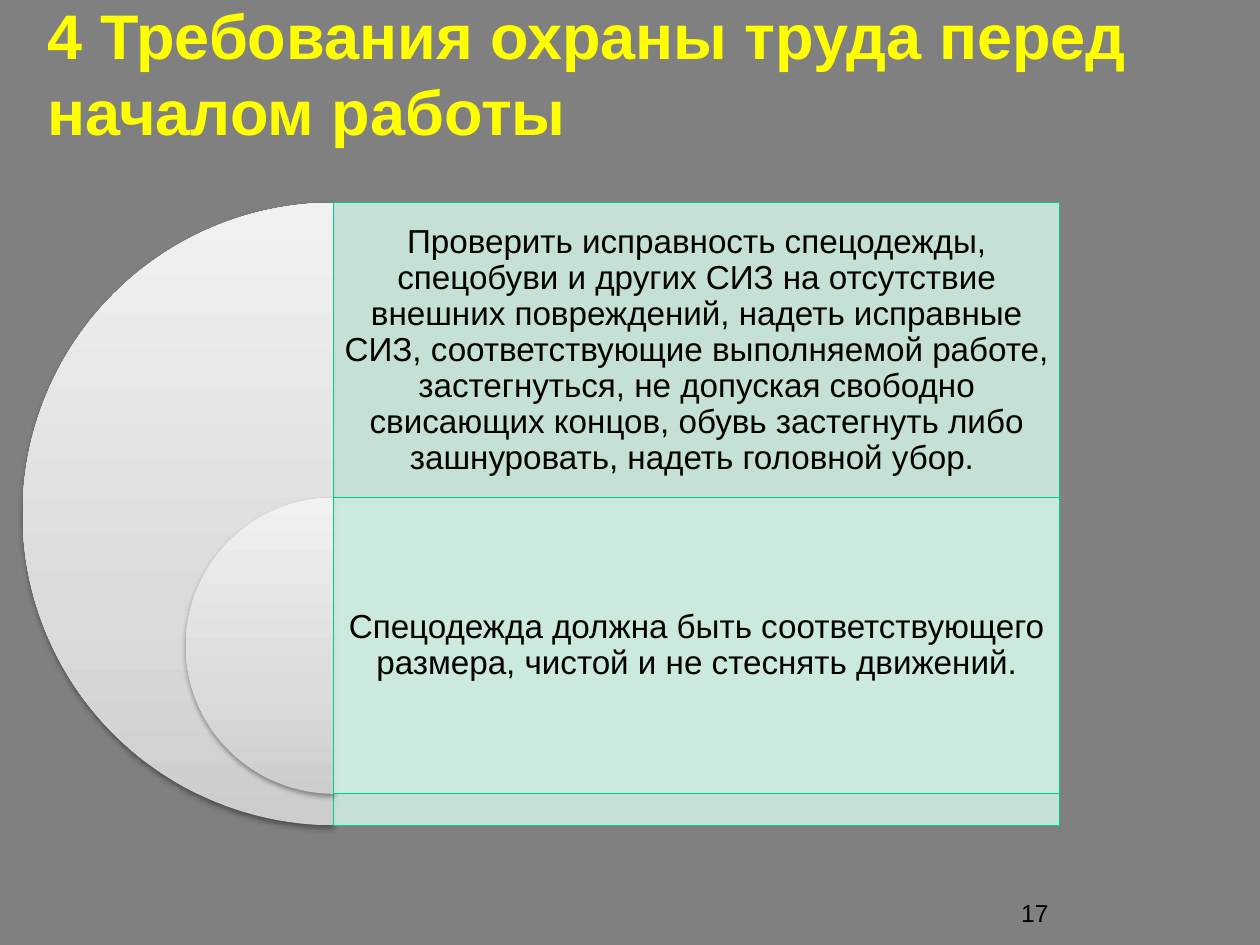
from dataclasses import dataclass

from lxml import etree
from pptx import Presentation
from pptx.dml.color import RGBColor
from pptx.enum.shapes import MSO_SHAPE
from pptx.enum.text import MSO_ANCHOR, MSO_AUTO_SIZE, PP_ALIGN
from pptx.oxml import parse_xml
from pptx.oxml.ns import qn
from pptx.util import Inches, Pt

PIE, RECT = MSO_SHAPE.PIE, MSO_SHAPE.RECTANGLE
TOP, MIDDLE = MSO_ANCHOR.TOP, MSO_ANCHOR.MIDDLE
LEFT, CENTER, RIGHT = PP_ALIGN.LEFT, PP_ALIGN.CENTER, PP_ALIGN.RIGHT
NO_AUTOFIT = MSO_AUTO_SIZE.NONE
A_NS = 'xmlns:a="http://schemas.openxmlformats.org/drawingml/2006/main"'


@dataclass(frozen=True)
class Theme:
    font: str = "Arial"
    background: str = "808080"
    title: str = "FFFF00"
    text: str = "000000"
    panel: str = "CCECDE"
    panel_line: str = "00CC99"
    panel_opacity: int = 90
    pie_stops: tuple = ((0, "CDCDCD"), (35, "DBDBDB"), (100, "F1F1F1"))
    title_size: int = 36
    body_size: int = 19
    number_size: int = 14


class SlideBuilder:
    def __init__(self, slide, theme):
        self.slide = slide
        self.theme = theme
        fill = slide.background.fill
        fill.solid()
        fill.fore_color.rgb = RGBColor.from_string(theme.background)

    def set_text(self, sp, text, size, color, align, anchor, inset=(0.1, 0.05), bold=False, spacing=1.0):
        tf = sp.text_frame
        tf.text = text
        tf.word_wrap = True
        tf.auto_size = NO_AUTOFIT
        tf.vertical_anchor = anchor
        tf.margin_left = tf.margin_right = Inches(inset[0])
        tf.margin_top = tf.margin_bottom = Inches(inset[1])
        p = tf.paragraphs[0]
        p.alignment = align
        p.line_spacing = spacing
        font = p.runs[0].font
        font.name = self.theme.font
        font.size = Pt(size)
        font.bold = bold
        font.color.rgb = RGBColor.from_string(color)

    def title(self, text, x, y, w, h):
        sp = self.slide.shapes.title
        sp.left, sp.top, sp.width, sp.height = map(Inches, (x, y, w, h))
        self.set_text(sp, text, self.theme.title_size, self.theme.title, LEFT, MIDDLE, bold=True)

    def textbox(self, text, x, y, w, h, size, align, anchor, **style):
        sp = self.slide.shapes.add_textbox(*map(Inches, (x, y, w, h)))
        self.set_text(sp, text, size, self.theme.text, align, anchor, **style)

    def half_disc(self, x, y, diameter):
        sp = self.slide.shapes.add_shape(PIE, *map(Inches, (x, y, diameter, diameter)))
        sp.adjustments[0] = 54
        sp.adjustments[1] = 162
        sp.line.fill.background()
        sp.fill.background()
        sp.shadow.inherit = False
        stops = "".join(
            f'<a:gs pos="{pos * 1000}"><a:srgbClr val="{color}"/></a:gs>'
            for pos, color in self.theme.pie_stops
        )
        gradient = parse_xml(
            f'<a:gradFill {A_NS} rotWithShape="1"><a:gsLst>{stops}</a:gsLst>'
            '<a:lin ang="16200000" scaled="0"/></a:gradFill>'
        )
        sp_pr = sp._element.spPr
        sp_pr.replace(sp_pr.find(qn("a:noFill")), gradient)
        sp_pr.find(qn("a:effectLst")).append(parse_xml(
            f'<a:outerShdw {A_NS} blurRad="{Pt(3.1)}" dist="{Pt(1.6)}" dir="5400000" rotWithShape="0">'
            '<a:srgbClr val="000000"><a:alpha val="38000"/></a:srgbClr></a:outerShdw>'
        ))

    def panel(self, x, y, w, h):
        sp = self.slide.shapes.add_shape(RECT, *map(Inches, (x, y, w, h)))
        sp.shadow.inherit = False
        sp.fill.solid()
        sp.fill.fore_color.rgb = RGBColor.from_string(self.theme.panel)
        color = sp._element.spPr.find(qn("a:solidFill"))[0]
        etree.SubElement(color, qn("a:alpha")).set("val", str(self.theme.panel_opacity * 1000))
        sp.line.color.rgb = RGBColor.from_string(self.theme.panel_line)
        sp.line.width = Pt(0.75)


def main():
    theme = Theme()
    prs = Presentation()
    prs.slide_width, prs.slide_height = Inches(10), Inches(7.5)
    builder = SlideBuilder(prs.slides.add_slide(prs.slide_layouts[5]), theme)
    builder.title("4 Требования охраны труда перед началом работы", 0.28, 0.3, 9.29, 0.55)

    axis, panel_width, row_height = 2.65, 5.76, 2.35
    rows = [
        (1.61, 4.94,
         "Проверить исправность спецодежды, спецобуви и других СИЗ на отсутствие внешних "
         "повреждений, надеть исправные СИЗ, соответствующие выполняемой работе, застегнуться, "
         "не допуская свободно свисающих концов, обувь застегнуть либо зашнуровать, надеть "
         "головной убор. "),
        (3.95, row_height,
         "Спецодежда должна быть соответствующего размера, чистой и не стеснять движений."),
    ]
    for top, diameter, text in rows:
        builder.half_disc(axis - diameter / 2, top, diameter)
        builder.panel(axis, top, panel_width, diameter)
        builder.textbox(text, axis, top, panel_width, row_height, theme.body_size,
                        CENTER, MIDDLE, inset=(0.08, 0.08), spacing=0.9)

    builder.textbox("17", 6.34, 7.08, 2.08, 0.31, theme.number_size, RIGHT, TOP)
    prs.save("out.pptx")


if __name__ == "__main__":
    main()
